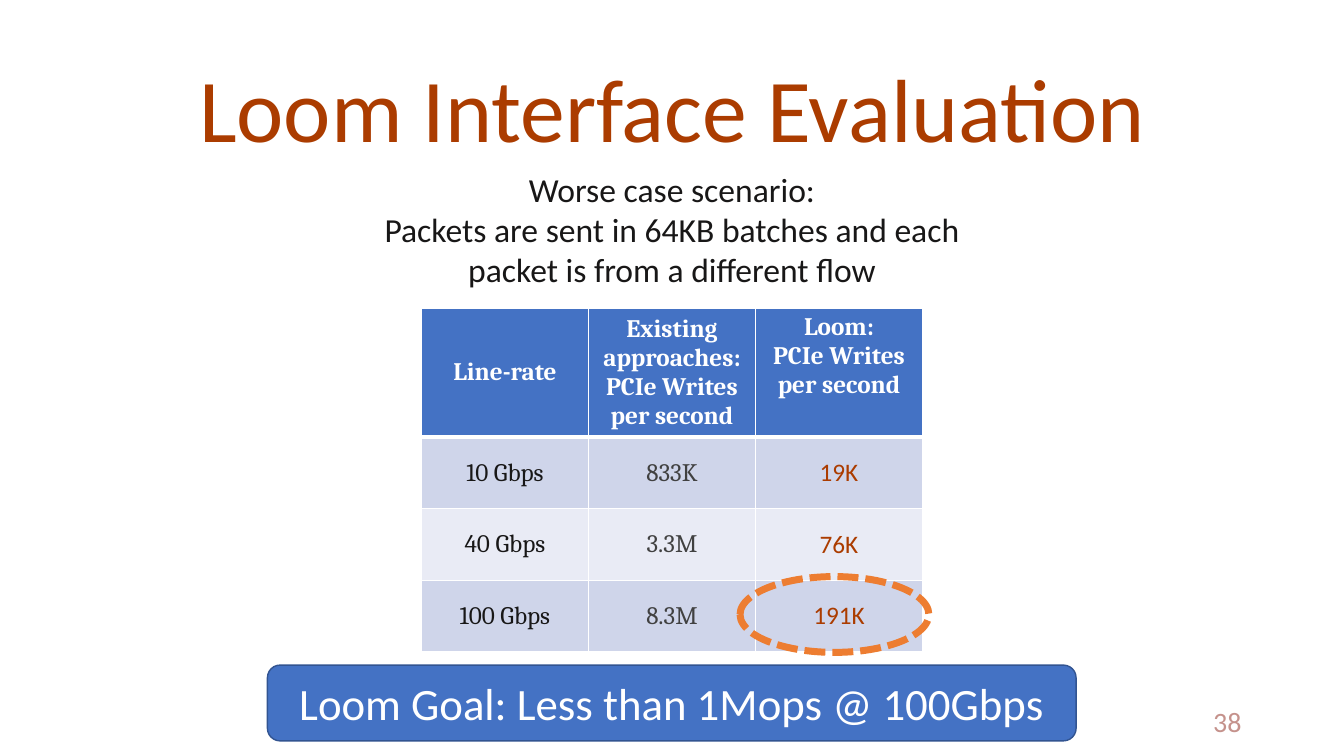
"""Builds the Loom interface evaluation slide."""
import pptx
import pptx.dml.color
import pptx.enum.dml
import pptx.enum.shapes
import pptx.enum.text
import pptx.oxml
import pptx.util
from pptx.oxml.ns import nsdecls

Cm = pptx.util.Cm
Pt = pptx.util.Pt
ALIGN = pptx.enum.text.PP_ALIGN
ANCHOR = pptx.enum.text.MSO_ANCHOR
SHAPE = pptx.enum.shapes.MSO_SHAPE

RUST, INK, GREY, WHITE, BLUE = "AB3C00", "181717", "414141", "FFFFFF", "4472C4"
BANDS = ["CFD5EA", "E9EBF5"]

TITLE = "Loom Interface Evaluation"
SCENARIO = [
    "Worse case scenario:",
    "Packets are sent in 64KB batches and each packet is from a different flow",
]
GOAL = "Loom Goal: Less than 1Mops @ 100Gbps"
PAGE_NUMBER = "38"
RATES = [
    ["Line-rate", "Existing approaches:\nPCIe Writes per second", "Loom:\nPCIe Writes per second"],
    ["10 Gbps", "833K", "19K"],
    ["40 Gbps", "3.3M", "76K"],
    ["100 Gbps", "8.3M", "191K"],
]
COLUMN_STYLES = [("Cambria", INK), ("Cambria", GREY), ("Calibri", RUST)]
TABLE_LEFT, TABLE_TOP = 10.62, 7.77
COLUMN_WIDTH, HEADER_HEIGHT, ROW_HEIGHT = 4.21, 3.17, 1.8


def color(value):
    return pptx.dml.color.RGBColor.from_string(value)


def paint(target, value):
    target.fill.solid()
    target.fill.fore_color.rgb = color(value)


def write(frame, lines, size, ink, font="Calibri", bold=False,
          align=ALIGN.CENTER, spacing=None):
    frame.word_wrap = True
    for index, line in enumerate(lines):
        para = frame.paragraphs[0] if index == 0 else frame.add_paragraph()
        para.alignment = align
        if spacing:
            para.line_spacing = spacing
        for part_index, part in enumerate(line.split("\n")):
            if part_index:
                para.add_line_break()
            span = para.add_run()
            span.text = part
            span.font.size = Pt(size)
            span.font.name = font
            span.font.bold = bold
            span.font.color.rgb = color(ink)


def add_text(page, place, lines, size, ink, anchor=ANCHOR.MIDDLE, **style):
    box = page.shapes.add_textbox(*map(Cm, place))
    box.text_frame.vertical_anchor = anchor
    write(box.text_frame, lines, size, ink, **style)


def add_outlined(page, kind, place, line, width):
    shape = page.shapes.add_shape(kind, *map(Cm, place))
    shape.shadow.inherit = False
    shape.line.color.rgb = color(line)
    shape.line.width = Pt(width)
    return shape


def add_borders(cell, bottom):
    properties = cell._tc.get_or_add_tcPr()
    widths = {"lnL": 1, "lnR": 1, "lnT": 1, "lnB": bottom}
    for index, (side, width) in enumerate(widths.items()):
        properties.insert(index, pptx.oxml.parse_xml(
            f'<a:{side} {nsdecls("a")} w="{Pt(width)}"><a:solidFill>'
            f'<a:srgbClr val="{WHITE}"/></a:solidFill></a:{side}>'))


def add_rates(page):
    rows, columns = len(RATES), len(RATES[0])
    heights = [HEADER_HEIGHT] + [ROW_HEIGHT] * (rows - 1)
    table = page.shapes.add_table(
        rows, columns, Cm(TABLE_LEFT), Cm(TABLE_TOP),
        Cm(COLUMN_WIDTH * columns), Cm(sum(heights))).table
    for column in table.columns:
        column.width = Cm(COLUMN_WIDTH)
    for row, height in zip(table.rows, heights):
        row.height = Cm(height)
    for row, texts in enumerate(RATES):
        header = row == 0
        for column, text in enumerate(texts):
            cell = table.cell(row, column)
            cell.margin_left = cell.margin_right = Cm(0.1)
            cell.margin_top = cell.margin_bottom = Cm(0.1)
            top = header and column == columns - 1
            cell.vertical_anchor = ANCHOR.TOP if top else ANCHOR.MIDDLE
            font, ink = ("Cambria", WHITE) if header else COLUMN_STYLES[column]
            paint(cell, BLUE if header else BANDS[(row - 1) % 2])
            write(cell.text_frame, [text], 18, ink, font=font, bold=header)
            add_borders(cell, 3 if header else 1)


def main():
    deck = pptx.Presentation()
    deck.slide_width, deck.slide_height = Cm(33.87), Cm(19.05)
    page = deck.slides.add_slide(deck.slide_layouts[6])

    add_text(page, (2.33, 1.01, 29.21, 3.68), [TITLE], 64, RUST, spacing=0.9)
    add_text(page, (23.92, 17.66, 7.62, 1.01), [PAGE_NUMBER], 20, "C5928C", align=ALIGN.RIGHT)
    add_rates(page)
    add_text(page, (8.4, 4.12, 17.07, 3.33), SCENARIO, 24, INK, anchor=ANCHOR.TOP)

    goal = add_outlined(page, SHAPE.ROUNDED_RECTANGLE, (6.74, 16.76, 20.38, 1.91), "325491", 1)
    paint(goal, BLUE)
    goal.text_frame.vertical_anchor = ANCHOR.MIDDLE
    write(goal.text_frame, [GOAL], 32, WHITE)

    highlight = add_outlined(page, SHAPE.OVAL, (18.65, 14.53, 4.76, 1.91), "ED7D31", 5)
    highlight.fill.background()
    highlight.line.dash_style = pptx.enum.dml.MSO_LINE.SQUARE_DOT
    highlight.line._ln.find(pptx.oxml.ns.qn("a:prstDash")).set("val", "sysDash")

    deck.save("out.pptx")


if __name__ == "__main__":
    main()
